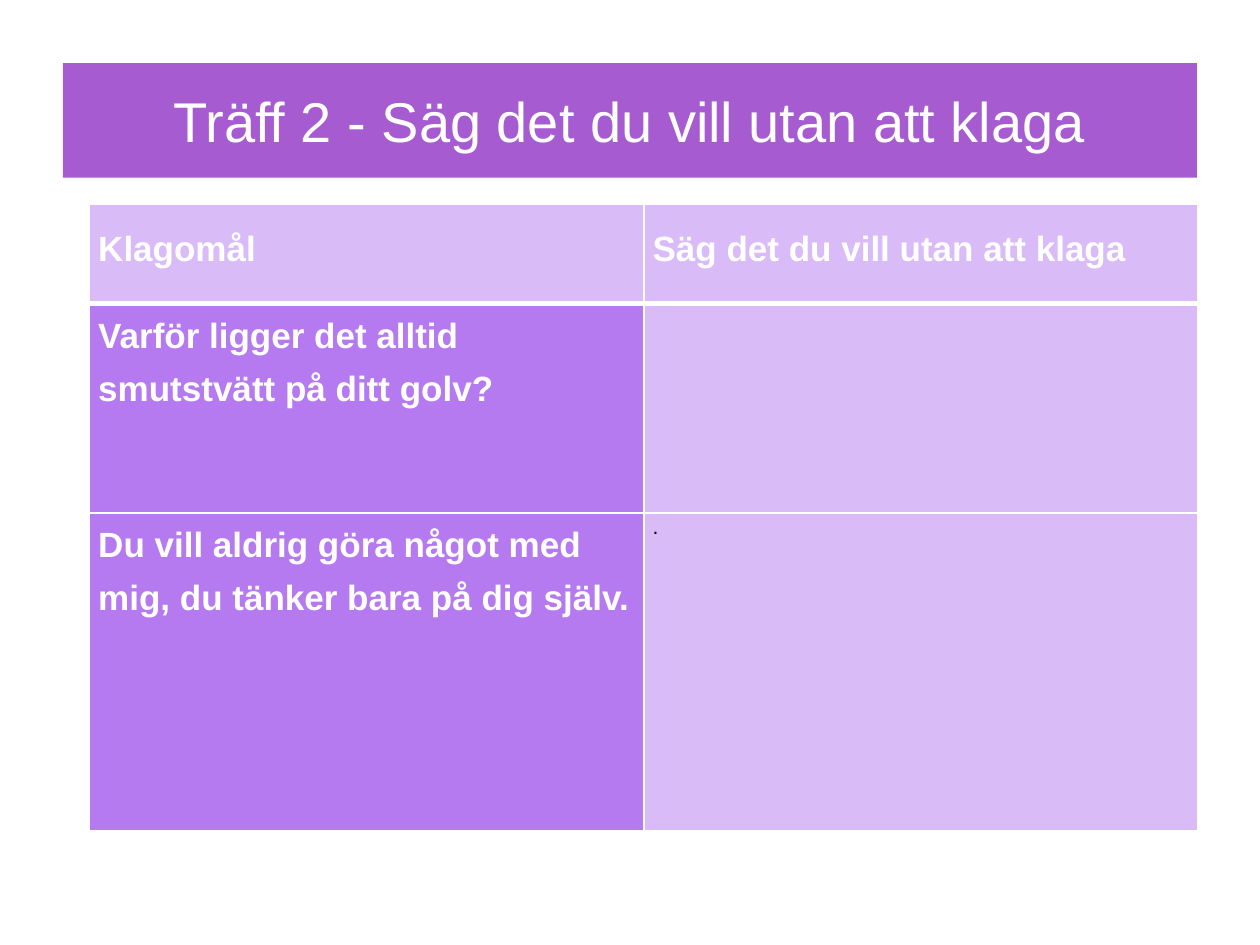
import pptx
import pptx.util
import pptx.dml.color
import pptx.enum.shapes
import pptx.enum.text
import lxml.etree

Inches, Pt = pptx.util.Inches, pptx.util.Pt
WIDTH, HEIGHT = 10, 7.5
FONT = "Arial"
WHITE, BLACK = "FFFFFF", "000000"
BANNER, LIGHT, DARK = "A75BD1", "D9BBF7", "B57AEF"
LINE = 15  # line pitch of the table text in points


def color(value):
    return pptx.dml.color.RGBColor.from_string(value)


def paint(part, value):
    part.fill.solid()
    part.fill.fore_color.rgb = color(value)


def style(p, size, value, bold=False):
    for r in p.runs:
        r.font.name, r.font.size, r.font.bold = FONT, Pt(size), bold
        r.font.color.rgb = color(value)


def set_borders(cell, bottom):
    """White rules on all sides, placed before the cell's fill."""
    pr = cell._tc.get_or_add_tcPr()
    ns = "{http://schemas.openxmlformats.org/drawingml/2006/main}"
    for i, (side, width) in enumerate((("L", 1), ("R", 1), ("T", 1), ("B", bottom))):
        ln = lxml.etree.Element(ns + "ln" + side, w=str(Pt(width)))
        fill = lxml.etree.SubElement(ln, ns + "solidFill")
        lxml.etree.SubElement(fill, ns + "srgbClr", val=WHITE)
        pr.insert(i, ln)


def add_banner(slide, box, text):
    sp = slide.shapes.add_shape(pptx.enum.shapes.MSO_SHAPE.RECTANGLE,
                                *map(Inches, box))
    sp.shadow.inherit = False
    paint(sp, BANNER)
    sp.line.fill.background()
    tf = sp.text_frame
    tf.margin_left = tf.margin_right = tf.margin_top = tf.margin_bottom = 0
    tf.vertical_anchor = pptx.enum.text.MSO_ANCHOR.MIDDLE
    tf.text = text
    p = tf.paragraphs[0]
    p.alignment = pptx.enum.text.PP_ALIGN.CENTER
    style(p, 32, WHITE)


def fill_cell(cell, text, fill, top, size, value, bold, bottom):
    paint(cell, fill)
    set_borders(cell, bottom)
    cell.margin_left = cell.margin_right = Inches(0.07)
    cell.margin_top, cell.margin_bottom = Pt(top), 0
    cell.text_frame.text = text
    for i, p in enumerate(cell.text_frame.paragraphs):
        p.line_spacing = Pt(LINE)
        if i:
            p.space_before = Pt(LINE)
        style(p, size, value, bold)


def add_complaints(slide, box, row_heights, rows):
    table = slide.shapes.add_table(len(rows), 2, *map(Inches, box)).table
    for col in table.columns:
        col.width = Inches(box[2] / 2)
    for i, (height, texts) in enumerate(zip(row_heights, rows)):
        table.rows[i].height = Inches(height)
        for j, text in enumerate(texts):
            cell = table.cell(i, j)
            if i == 0:  # header
                fill_cell(cell, text, LIGHT, LINE + 7.2, 20, WHITE, True, 3)
            elif j == 0:  # complaint
                fill_cell(cell, text, DARK, LINE, 20, WHITE, True, 1)
            else:  # room for an answer
                fill_cell(cell, text, LIGHT, 0, 12, BLACK, False, 1)
            if i == 1:  # share the thick rule under the header
                cell._tc.tcPr[2].set("w", str(Pt(3)))


def main():
    prs = pptx.Presentation()
    prs.slide_width, prs.slide_height = Inches(WIDTH), Inches(HEIGHT)
    slide = prs.slides.add_slide(prs.slide_layouts[6])
    margin = WIDTH * 0.05
    add_banner(slide, (margin, margin, WIDTH - 2 * margin, 0.91),
               "Träff 2 - Säg det du vill utan att klaga")
    heights = (0.79, 1.66, 2.52)
    add_complaints(slide, (0.71, 1.62, 8.8, sum(heights)), heights, (
        ("Klagomål", "Säg det du vill utan att klaga"),
        ("Varför ligger det alltid\nsmutstvätt på ditt golv?", ""),
        ("Du vill aldrig göra något med\nmig, du tänker bara på dig själv.", "."),
    ))
    prs.save("out.pptx")


if __name__ == "__main__":
    main()
